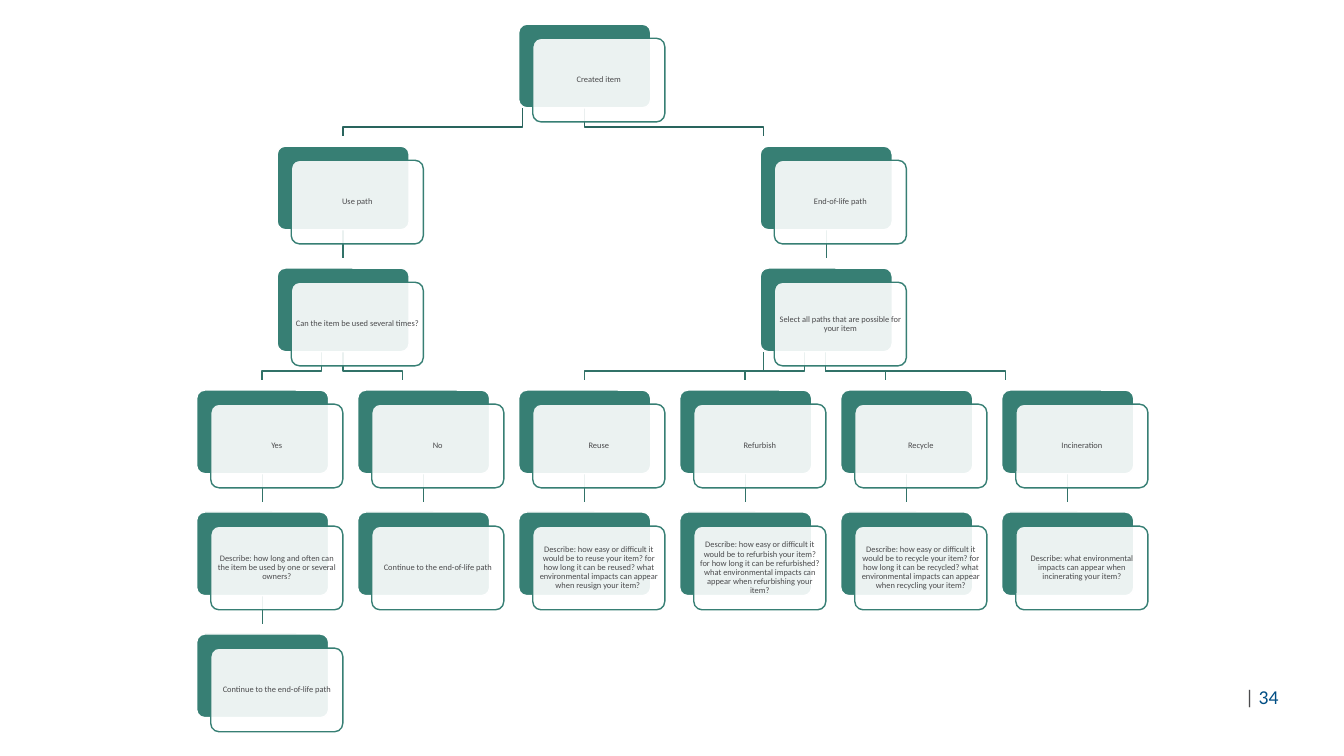
from lxml import etree
from pptx import Presentation
from pptx import util as u
from pptx.dml.color import RGBColor
from pptx.enum import shapes, text
from pptx.oxml.ns import qn

GREEN, WHITE, GREY, BLUE = "377F74", "FFFFFF", "4B4B4D", "004E84"
LEFT, TOP, COL, ROW = 1.95, 0.24, 1.597, 1.21
BOX_W, BOX_H, OFFSET = 1.31, 0.83, 0.14
STUB = 0.28


def rgb(value):
    return RGBColor.from_string(value)


def write(p, words, size, color):
    r = p.add_run()
    r.text = words
    for name, value in {"name": "Calibri", "size": u.Pt(size)}.items():
        setattr(r.font, name, value)
    r.font.color.rgb = rgb(color)


prs = Presentation()
prs.slide_width, prs.slide_height = u.Inches(13.33), u.Inches(7.5)
s = prs.slides.add_slide(prs.slide_layouts[6])

tf = s.shapes.add_textbox(u.Inches(12.35), u.Inches(6.79), u.Inches(0.68), u.Inches(0.24)).text_frame
tf.vertical_anchor = text.MSO_ANCHOR.MIDDLE
tf.margin_left = tf.margin_right = tf.margin_top = tf.margin_bottom = 0
write(tf.paragraphs[0], "| ", 14, GREY)
write(tf.paragraphs[0], "34", 14, BLUE)

elbows = [
    (0, 5.18, 3.4), (0, 5.8, 7.57),
    (2, 3.19, 2.6), (2, 3.4, 3.99),
    (2, 7.57, 5.8), (2, 7.98, 7.39), (2, 8.19, 8.78), (2, 8.19, 9.97),
]
for row, start, end in elbows:
    y = TOP + BOX_H + ROW * row
    points = [(start, y + 0.19), (end, y + 0.19), (end, y + STUB)]
    builder = s.shapes.build_freeform(u.Inches(start), u.Inches(y))
    builder.add_line_segments([(u.Inches(a), u.Inches(b)) for a, b in points], close=False)
    sp = builder.convert_to_shape()
    sp.shadow.inherit = False
    sp.fill.background()
    sp.line.color.rgb = rgb("317268" if row else "29645D")
    sp.line.width = u.Pt(1)

steps = [
    (2, 0, "Created item"),
    (0.5, 1, "Use path"),
    (0.5, 2, "Can the item be used several times?"),
    (0, 3, "Yes"),
    (0, 4, "Describe: how long and often can the item be used by one or several owners?"),
    (0, 5, "Continue to the end-of-life path"),
    (1, 3, "No"),
    (1, 4, "Continue to the end-of-life path"),
    (3.5, 1, "End-of-life path"),
    (3.5, 2, "Select all paths that are possible for your item"),
    (2, 3, "Reuse"),
    (2, 4, "Describe: how easy or difficult it would be to reuse your item? for how long it can be reused? "
           "what environmental impacts can appear when reusign your item? "),
    (3, 3, "Refurbish"),
    (3, 4, "Describe: how easy or difficult it would be to refurbish your item? for how long it can be "
           "refurbished? what environmental impacts can appear when refurbishing your item?"),
    (4, 3, "Recycle"),
    (4, 4, "Describe: how easy or difficult it would be to recycle your item? for how long it can be "
           "recycled? what environmental impacts can appear when recycling your item?"),
    (5, 3, "Incineration"),
    (5, 4, "Describe: what environmental impacts can appear when incinerating your item?"),
]
places = {(col, row) for col, row, words in steps}
for col, row, words in steps:
    x, y = LEFT + COL * col, TOP + ROW * row
    cards = []
    for shift, fill, line in [(0, GREEN, WHITE), (OFFSET, WHITE, GREEN)]:
        sp = s.shapes.add_shape(shapes.MSO_SHAPE.ROUNDED_RECTANGLE, u.Inches(x + shift),
                                u.Inches(y + shift), u.Inches(BOX_W), u.Inches(BOX_H))
        sp.adjustments[0] = 0.1
        sp.shadow.inherit = False
        sp.fill.solid()
        sp.fill.fore_color.rgb = rgb(fill)
        sp.line.color.rgb = rgb(line)
        sp.line.width = u.Pt(1)
        cards.append(sp)
    back, front = cards

    color = front._element.spPr.find(qn("a:solidFill"))[0]
    etree.SubElement(color, qn("a:alpha")).set("val", "90000")
    tf = front.text_frame
    inset = u.Inches(0.02)
    for name, value in {"word_wrap": True, "vertical_anchor": text.MSO_ANCHOR.MIDDLE,
                        "margin_left": inset, "margin_right": inset,
                        "margin_top": inset, "margin_bottom": inset}.items():
        setattr(tf, name, value)
    p = tf.paragraphs[0]
    p.alignment = text.PP_ALIGN.CENTER
    p.line_spacing = 0.9
    write(p, words, 6, GREY)

    if (col, row + 1) in places:
        middle, bottom = u.Inches(x + BOX_W / 2), y + BOX_H
        link = s.shapes.add_connector(shapes.MSO_CONNECTOR.STRAIGHT, middle, u.Inches(bottom),
                                      middle, u.Inches(bottom + STUB))
        link.begin_connect(back, 2)
        link.line.color.rgb = rgb("317268")
        link.line.width = u.Pt(1)
        etree.SubElement(link._element.spPr, qn("a:effectLst"))
        back._element.addprevious(link._element)

prs.save("out.pptx")
